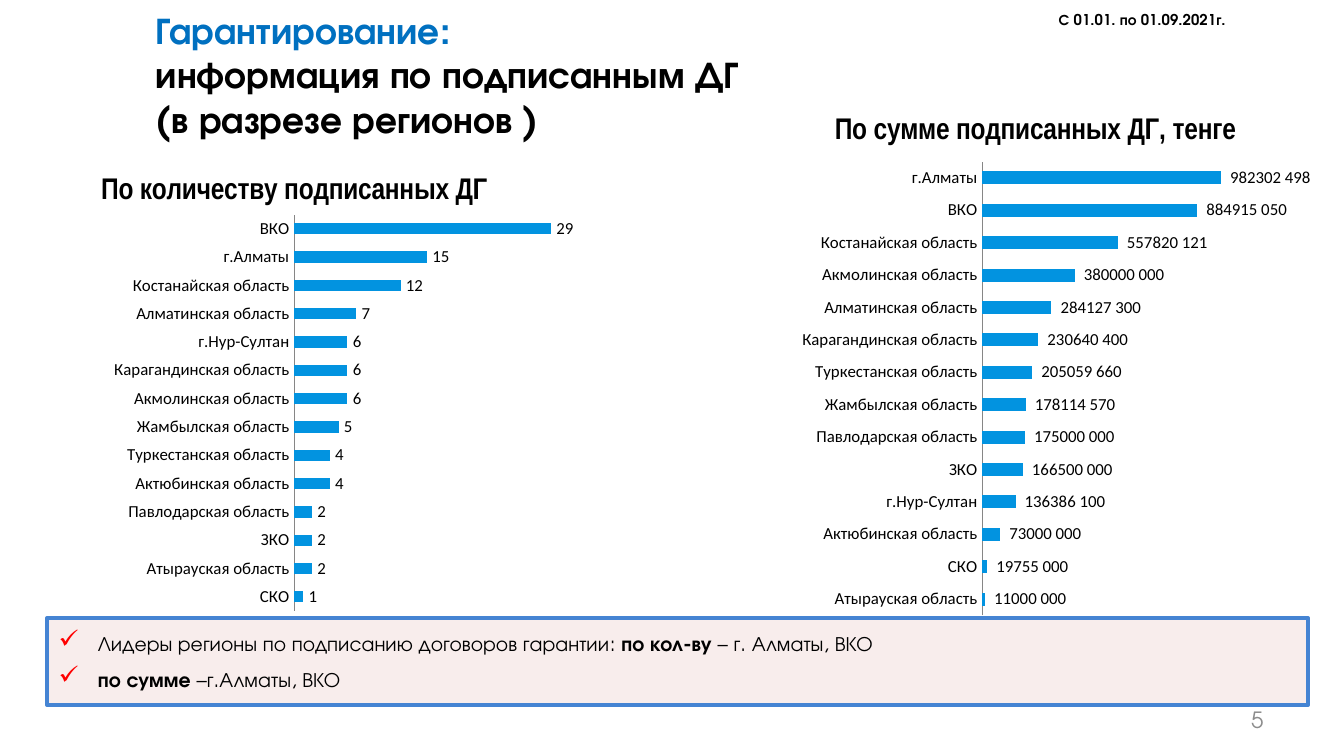
from lxml import etree
from pptx import Presentation
from pptx.chart.data import CategoryChartData
from pptx.dml.color import RGBColor
from pptx.enum.chart import XL_CHART_TYPE, XL_LABEL_POSITION, XL_TICK_MARK
from pptx.enum.shapes import MSO_SHAPE
from pptx.enum.text import MSO_ANCHOR, MSO_AUTO_SIZE, PP_ALIGN
from pptx.oxml import parse_xml
from pptx.oxml.ns import nsdecls, qn
from pptx.util import Cm, Pt

BAR = XL_CHART_TYPE.BAR_CLUSTERED
OUTSIDE = XL_LABEL_POSITION.OUTSIDE_END
NO_TICK = XL_TICK_MARK.NONE
RECT = MSO_SHAPE.RECTANGLE
TOP, MIDDLE = MSO_ANCHOR.TOP, MSO_ANCHOR.MIDDLE
NO_FIT = MSO_AUTO_SIZE.NONE
LEFT, RIGHT = PP_ALIGN.LEFT, PP_ALIGN.RIGHT

FONT, CHART_FONT, HEADING_FONT = "TeX Gyre Adventor", "Calibri", "Arial Narrow"
COLORS = {"black": "000000", "heading": "0070C0", "number": "8C8C8C", "bar": "0293E0",
          "axis": "868686", "panel": "F2DCDB", "border": "4584D3", "check": "FF0000"}

TITLE = [[("Гарантирование: \v", {"color": "heading"}), ("информация по подписанным ДГ", {})],
         [("(в разрезе регионов )", {})]]
PERIOD = [[("С 01.01. по 01.09.2021г.", {"bold": True})]]
NUMBER = [[("5", {"color": "number"})]]
LEADERS = [[("Лидеры регионы по подписанию договоров гарантии: ", {}),
            ("по кол-ву", {"bold": True}), (" – г. Алматы, ВКО", {})],
           [("по сумме ", {"bold": True}), ("–г.Алматы, ВКО", {})]]
CHARTS = [
    {"title": "По количеству подписанных ДГ", "at": (-1.09, 2.9, 13.31, 8.92),
     "plot": (0.5, 0.13, 0.44, 0.84), "max": 35, "format": "General",
     "data": [("СКО", 1), ("Атырауская область", 2), ("ЗКО", 2), ("Павлодарская область", 2),
              ("Актюбинская область", 4), ("Туркестанская область", 4),
              ("Жамбылская область", 5), ("Акмолинская область", 6),
              ("Карагандинская область", 6), ("г.Нур-Султан", 6), ("Алматинская область", 7),
              ("Костанайская область", 12), ("г.Алматы", 15), ("ВКО", 29)]},
    {"title": "По сумме подписанных ДГ, тенге", "at": (13.31, 1.73, 12.52, 10.21),
     "plot": (0.42, 0.13, 0.44, 0.84), "max": 1200000000,
     "format": '_-* #\\ ##0_р_._-;\\-* #\\ ##0_р_._-;_-* "-"',
     "data": [("Атырауская область", 11000000), ("СКО", 19755000),
              ("Актюбинская область", 73000000), ("г.Нур-Султан", 136386100),
              ("ЗКО", 166500000), ("Павлодарская область", 175000000),
              ("Жамбылская область", 178114570), ("Туркестанская область", 205059660),
              ("Карагандинская область", 230640400), ("Алматинская область", 284127300),
              ("Акмолинская область", 380000000), ("Костанайская область", 557820121),
              ("ВКО", 884915050), ("г.Алматы", 982302498)]},
]


def rgb(name):
    return RGBColor.from_string(COLORS[name])


def set_font(font, name, size, bold=False, color="black"):
    font.name, font.size, font.bold = name, Pt(size), bold
    font.color.rgb = rgb(color)


def add_check(p):
    pPr = p._p.get_or_add_pPr()
    pPr.set("marL", str(Cm(0.76)))
    pPr.set("indent", str(Cm(-0.74)))
    color = etree.SubElement(pPr, qn("a:buClr"))
    etree.SubElement(color, qn("a:srgbClr"), val=COLORS["check"])
    etree.SubElement(pPr, qn("a:buSzPct"), val="125000")
    etree.SubElement(pPr, qn("a:buChar"), char="✓")


def write(sp, paragraphs, size, bold=False, align=LEFT, anchor=TOP, wrap=True, check=False, after=0):
    tf = sp.text_frame
    tf.word_wrap, tf.vertical_anchor, tf.auto_size = wrap, anchor, NO_FIT
    for i, runs in enumerate(paragraphs):
        p = tf.add_paragraph() if i else tf.paragraphs[0]
        if check:
            add_check(p)
        p.alignment = align
        p.space_before, p.space_after = Pt(0), Pt(after)
        for text, style in runs:
            r = p.add_run()
            r.text = text.rstrip("\v")
            set_font(r.font, FONT, size, **{"bold": bold, **style})
            if text.endswith("\v"):
                p.add_line_break()


def add_bar_chart(s, spec):
    data = CategoryChartData(number_format=spec["format"])
    data.categories = [region for region, _ in spec["data"]]
    data.add_series("Series 1", [value for _, value in spec["data"]])
    chart = s.shapes.add_chart(BAR, *map(Cm, spec["at"]), data).chart
    set_font(chart.font, CHART_FONT, 10)
    chart.has_legend = False
    chart.has_title = True
    p = chart.chart_title.text_frame.paragraphs[0]
    r = p.add_run()
    r.text = spec["title"]
    set_font(r.font, HEADING_FONT, 16, bold=True)

    axis = chart.category_axis
    axis.major_tick_mark = axis.minor_tick_mark = NO_TICK
    axis.format.line.color.rgb = rgb("axis")
    set_font(axis.tick_labels.font, CHART_FONT, 9)
    values = chart.value_axis
    values.visible = values.has_major_gridlines = False
    values.minimum_scale, values.maximum_scale = 0, spec["max"]

    plot = chart.plots[0]
    plot.gap_width, plot.vary_by_categories = 150, False
    fill = plot.series[0].format.fill
    fill.solid()
    fill.fore_color.rgb = rgb("bar")
    plot.has_data_labels = True
    labels = plot.data_labels
    labels.show_value, labels.position = True, OUTSIDE
    labels.number_format, labels.number_format_is_linked = spec["format"], False
    set_font(labels.font, CHART_FONT, 9)

    area = chart._chartSpace.chart.plotArea
    for old in area.findall(qn("c:layout")):
        area.remove(old)
    parts = [("layoutTarget", "inner"), ("xMode", "edge"), ("yMode", "edge"),
             *zip("xywh", spec["plot"])]
    inner = "".join(f'<c:{tag} val="{val}"/>' for tag, val in parts)
    area.insert(0, parse_xml(
        f'<c:layout {nsdecls("c")}><c:manualLayout>{inner}</c:manualLayout></c:layout>'))


def add_panel(s):
    sp = s.shapes.add_shape(RECT, Cm(0.89), Cm(11.68), Cm(23.83), Cm(1.65))
    sp.shadow.inherit = False
    sp.fill.solid()
    sp.fill.fore_color.rgb = rgb("panel")
    color = sp._element.spPr.find(qn("a:solidFill"))[0]
    etree.SubElement(color, qn("a:alpha"), val="50000")
    sp.line.color.rgb, sp.line.width = rgb("border"), Pt(2)
    tf = sp.text_frame
    tf.margin_left = tf.margin_right = Cm(0.2)
    tf.margin_top = tf.margin_bottom = Cm(0.1)
    write(sp, LEADERS, 11, anchor=MIDDLE, check=True, after=6)


def main():
    """Build the slide on signed guarantee agreements by region."""
    prs = Presentation()
    prs.slide_width, prs.slide_height = Cm(25.4), Cm(14.29)
    s = prs.slides.add_slide(prs.slide_layouts[5])
    title = s.shapes.title
    title.left, title.top, title.width, title.height = map(Cm, (2.69, 0, 17.81, 2.26))
    write(title, TITLE, 20, bold=True)
    add_panel(s)
    period = s.shapes.add_textbox(Cm(19.76), Cm(0.08), Cm(3.76), Cm(0.61))
    write(period, PERIOD, 8, wrap=False)
    number = s.shapes.add_textbox(Cm(18.21), Cm(13.23), Cm(5.92), Cm(0.76))
    write(number, NUMBER, 12, align=RIGHT, anchor=MIDDLE)
    for spec in CHARTS:
        add_bar_chart(s, spec)
    prs.save("out.pptx")


if __name__ == "__main__":
    main()
